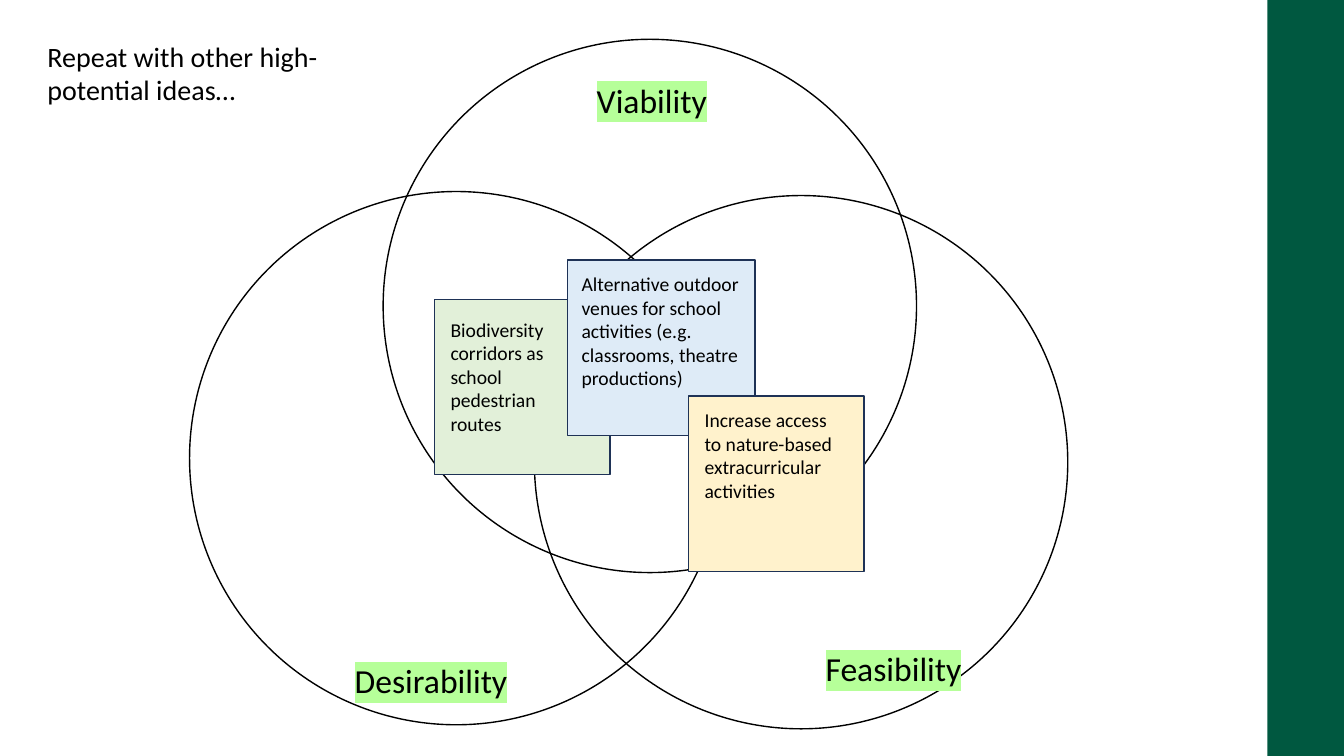
import pptx
import pptx.dml.color
import pptx.enum.shapes
import pptx.enum.text
import pptx.oxml
import pptx.oxml.ns
import pptx.util

Inches = pptx.util.Inches
Shapes = pptx.enum.shapes.MSO_SHAPE

COLORS = {
    "band": "005840",
    "ink": "000000",
    "note_line": "1E3256",
    "green": "E2F0D9",
    "blue": "DEEBF7",
    "yellow": "FFF2CC",
    "highlight": "B6FF99",
}


class VennSlide:
    """Holds the slide and its style, and draws each kind of element."""

    font_name = "Calibri"
    circle_size = 5.29

    def __init__(self, presentation):
        self.slide = presentation.slides.add_slide(presentation.slide_layouts[6])

    def color(self, name):
        return pptx.dml.color.RGBColor.from_string(COLORS[name])

    def shape(self, kind, box, fill=None, line=None):
        shape = self.slide.shapes.add_shape(kind, *map(Inches, box))
        shape.shadow.inherit = False
        if fill:
            shape.fill.solid()
            shape.fill.fore_color.rgb = self.color(fill)
        else:
            shape.fill.background()
        if line:
            shape.line.color.rgb = self.color(line)
            shape.line.width = pptx.util.Pt(1)
        else:
            shape.line.fill.background()

    def text(self, text, box, size, grow=True):
        text_frame = self.slide.shapes.add_textbox(*map(Inches, box)).text_frame
        text_frame.word_wrap = True
        if grow:
            text_frame.auto_size = pptx.enum.text.MSO_AUTO_SIZE.SHAPE_TO_FIT_TEXT
        else:
            text_frame.margin_left = text_frame.margin_right = 0
            text_frame.margin_top = text_frame.margin_bottom = 0
        text_frame.text = text
        paragraph = text_frame.paragraphs[0]
        font = paragraph.runs[0].font
        font.name = self.font_name
        font.size = pptx.util.Pt(size)
        font.color.rgb = self.color("ink")
        return paragraph

    def circle(self, left, top):
        self.shape(Shapes.OVAL, (left, top, self.circle_size, self.circle_size), line="ink")

    def note(self, text, box, fill, text_box):
        self.shape(Shapes.RECTANGLE, box, fill, "note_line")
        self.text(text, text_box, 14)

    def label(self, text, left, top, height=0.64):
        paragraph = self.text(text, (left, top, 6.04, height), 24)
        paragraph.line_spacing = 1.5
        properties = paragraph.runs[0].font._element
        highlight = pptx.oxml.parse_xml(
            f'<a:highlight {pptx.oxml.ns.nsdecls("a")}>'
            f'<a:srgbClr val="{COLORS["highlight"]}"/></a:highlight>'
        )
        properties.find(pptx.oxml.ns.qn("a:solidFill")).addnext(highlight)


def main():
    presentation = pptx.Presentation()
    presentation.slide_width = Inches(13.33)
    presentation.slide_height = Inches(7.5)
    venn = VennSlide(presentation)

    venn.shape(Shapes.RECTANGLE, (12.57, 0, 0.76, 7.5), "band")
    for left, top in ((1.88, 1.9), (3.8, 0.39), (5.3, 1.94)):
        venn.circle(left, top)

    venn.note("Biodiversity corridors as school pedestrian routes",
              (4.31, 2.97, 1.74, 1.74), "green", (4.37, 3.1, 1.27, 1.28))
    venn.note("Alternative outdoor venues for school activities "
              "(e.g. classrooms, theatre productions)",
              (5.63, 2.58, 1.86, 1.74), "blue", (5.67, 2.65, 1.83, 1.28))
    venn.note("Increase access to nature-based extracurricular activities",
              (6.83, 3.93, 1.74, 1.74), "yellow", (6.89, 4, 1.54, 1.04))

    venn.label("Feasibility", 8.09, 6.18, 1.24)
    venn.label("Desirability", 3.42, 6.3)
    venn.label("Viability", 5.82, 0.54)
    venn.text("Repeat with other high-potential ideas…", (0.47, 0.39, 3.65, 0.75), 20, grow=False)

    presentation.save("out.pptx")


if __name__ == "__main__":
    main()
